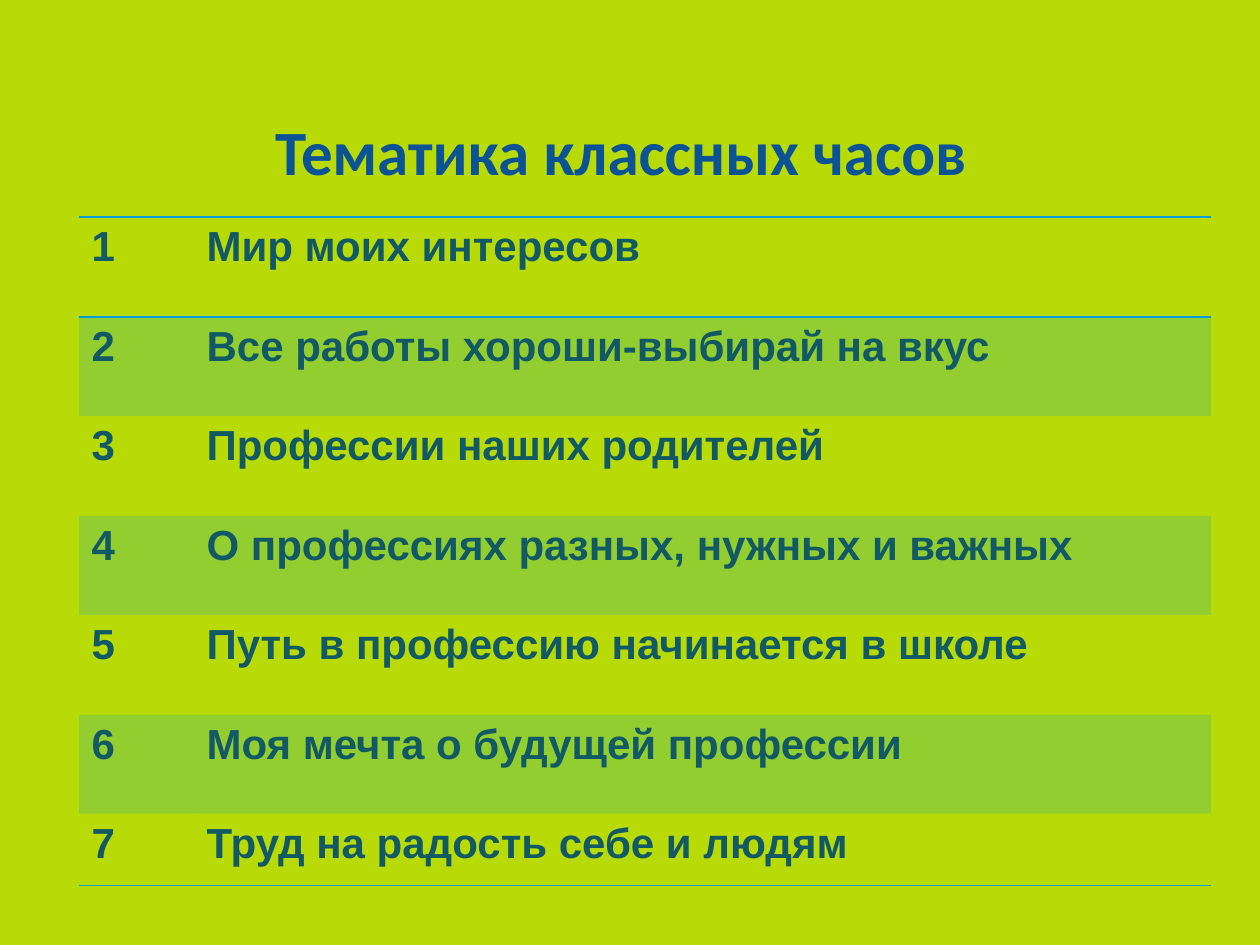
from dataclasses import dataclass

from lxml.etree import SubElement
from pptx import Presentation
from pptx.dml.color import RGBColor as RGB
from pptx.enum.text import MSO_ANCHOR as ANCHOR, PP_ALIGN as ALIGN
from pptx.oxml import parse_xml
from pptx.oxml.ns import nsdecls, qn
from pptx.util import Emu, Pt

TOPICS = [
    "Мир моих интересов",
    "Все работы хороши-выбирай на вкус",
    "Профессии наших родителей",
    "О профессиях разных, нужных и важных",
    "Путь в профессию начинается в школе",
    "Моя мечта о будущей профессии",
    "Труд на радость себе и людям",
]
COLUMNS = [115, 1017]
ROWS = [100, 99] * 3 + [72]
PLAIN_TABLE = "{2D5ABB26-0587-4C30-8999-92F81FD0307C}"


@dataclass(frozen=True)
class Theme:
    background: str = "B8DB07"
    title: str = "0B5394"
    text: str = "115964"
    accent: str = "009DD9"
    band_alpha: int = 20
    title_font: str = "Calibri"
    body_font: str = "Arial"
    title_size: int = 36
    body_size: int = 24
    rule_width: int = 1


def px(n):
    return Emu(round(n * 914400 / 126))


class SlideBuilder:
    """Draws the elements of one slide in a shared theme."""

    def __init__(self, s, theme):
        self.s, self.theme = s, theme
        self.fill(s.background.fill, theme.background)

    def fill(self, fill, color):
        fill.solid()
        fill.fore_color.rgb = RGB.from_string(color)

    def font(self, p, name, size, color):
        f = p.font
        f.name, f.size, f.bold = name, Pt(size), True
        f.color.rgb = RGB.from_string(color)

    def title(self, text, x, y, w, h):
        t = self.theme
        tf = self.s.shapes.add_textbox(px(x), px(y), px(w), px(h)).text_frame
        tf.word_wrap = True
        tf.vertical_anchor = ANCHOR.BOTTOM
        tf.margin_left = tf.margin_right = tf.margin_bottom = 0
        p = tf.paragraphs[0]
        p.text, p.alignment = text, ALIGN.CENTER
        self.font(p, t.title_font, t.title_size, t.title)

    def band(self, cell):
        self.fill(cell.fill, self.theme.accent)
        color = cell._tc.tcPr.find(".//" + qn("a:srgbClr"))
        SubElement(color, qn("a:alpha"), val=str(self.theme.band_alpha * 1000))

    def rules(self, cell, sides):
        t = self.theme
        for i, side in enumerate(sides):
            cell._tc.get_or_add_tcPr().insert(i, parse_xml(
                f'<a:ln{side} {nsdecls("a")} w="{Pt(t.rule_width)}"><a:solidFill>'
                f'<a:srgbClr val="{t.accent}"/></a:solidFill></a:ln{side}>'))

    def table(self, topics, x, y, widths, heights):
        t = self.theme
        table = self.s.shapes.add_table(
            len(heights), len(widths), px(x), px(y),
            px(sum(widths)), px(sum(heights))).table
        table.first_row = table.horz_banding = False
        table._tbl.tblPr.find(qn("a:tableStyleId")).text = PLAIN_TABLE
        for column, width in zip(table.columns, widths):
            column.width = px(width)
        sides = {0: "TB", len(topics) - 1: "B"}
        for i, (row, height, topic) in enumerate(zip(table.rows, heights, topics)):
            row.height = px(height)
            for cell, text in zip(row.cells, (str(i + 1), topic)):
                p = cell.text_frame.paragraphs[0]
                p.text = text
                self.font(p, t.body_font, t.body_size, t.text)
                if i % 2:
                    self.band(cell)
                else:
                    cell.fill.background()
                self.rules(cell, sides.get(i, ""))


def main():
    prs = Presentation()
    prs.slide_width, prs.slide_height = px(1260), px(945)
    s = prs.slides.add_slide(prs.slide_layouts[6])
    builder = SlideBuilder(s, Theme())
    builder.title("Тематика классных часов", 49, 98, 1144, 90)
    builder.table(TOPICS, 79, 217, COLUMNS, ROWS)
    prs.save("out.pptx")


if __name__ == "__main__":
    main()
